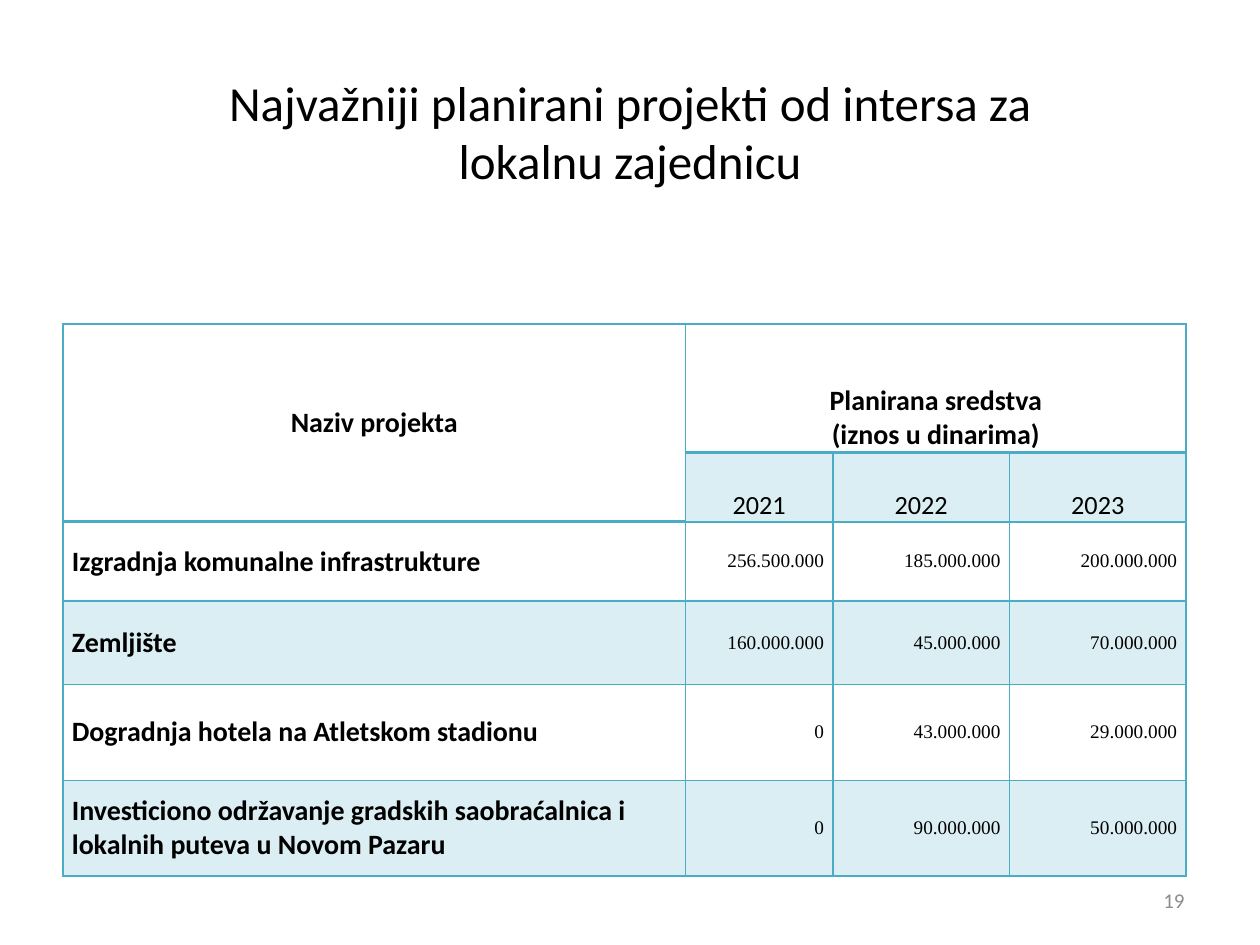
from dataclasses import dataclass

from lxml import etree
from pptx import Presentation
from pptx import util as u
from pptx.dml.color import RGBColor
from pptx.enum import text
from pptx.oxml import ns

BLACK = RGBColor(0x00, 0x00, 0x00)
GRAY = RGBColor(0x8C, 0x8C, 0x8C)
TEAL = RGBColor(0x4B, 0xAC, 0xC6)
TINT_ALPHA = 20000
LEFT, CENTER, RIGHT = text.PP_ALIGN.LEFT, text.PP_ALIGN.CENTER, text.PP_ALIGN.RIGHT
MIDDLE, BOTTOM = text.MSO_ANCHOR.MIDDLE, text.MSO_ANCHOR.BOTTOM


@dataclass(frozen=True)
class Style:
    size: float
    align: int
    bold: bool = False
    name: str = "Calibri"
    color: RGBColor = BLACK
    anchor: int = MIDDLE


@dataclass(frozen=True)
class Project:
    name: str
    amounts: tuple[str, str, str]


TITLE = Style(28, CENTER)
PAGE_NUMBER = Style(12, RIGHT, color=GRAY)
NAME_HEADING = Style(16, CENTER, bold=True)
FUNDS_HEADING = Style(16, CENTER, bold=True, anchor=BOTTOM)
YEAR = Style(15, CENTER, anchor=BOTTOM)
PROJECT_NAME = Style(16, LEFT, bold=True)
AMOUNT = Style(11, RIGHT, name="Times New Roman")

COLUMN_WIDTHS = (12.55, 2.97, 3.56, 3.56)
ROW_HEIGHTS = (2.59, 1.4, 1.6, 1.68, 1.93, 1.93)
YEARS = ("2021", "2022", "2023")
PROJECTS = (
    Project("Izgradnja komunalne infrastrukture",
            ("256.500.000", "185.000.000", "200.000.000")),
    Project("Zemljište", ("160.000.000", "45.000.000", "70.000.000")),
    Project("Dogradnja hotela na Atletskom stadionu",
            ("0", "43.000.000", "29.000.000")),
    Project("Investiciono održavanje gradskih saobraćalnica i\n"
            "lokalnih puteva u Novom Pazaru",
            ("0", "90.000.000", "50.000.000")),
)


def write(frame, wording: str, style: Style) -> None:
    frame.text = wording
    font_format = {"size": u.Pt(style.size), "bold": style.bold, "name": style.name}
    for paragraph in frame.paragraphs:
        paragraph.alignment = style.align
        for run in paragraph.runs:
            for attribute, value in font_format.items():
                setattr(run.font, attribute, value)
            run.font.color.rgb = style.color


def add_label(slide, wording: str, style: Style, left: float, top: float,
              width: float, height: float) -> None:
    label = slide.shapes.add_textbox(u.Cm(left), u.Cm(top), u.Cm(width), u.Cm(height))
    label.text_frame.word_wrap = True
    label.text_frame.vertical_anchor = style.anchor
    write(label.text_frame, wording, style)


def format_cell(cell, tinted: bool, bottom_width: float = 1) -> None:
    cell_format = {"margin_left": u.Cm(0.18), "margin_right": u.Cm(0.18),
                   "margin_top": 0, "margin_bottom": 0}
    for attribute, value in cell_format.items():
        setattr(cell, attribute, value)

    # Borders come before the fill in the cell properties
    properties = cell._tc.get_or_add_tcPr()
    for side, width in (("L", 1), ("R", 1), ("T", 1), ("B", bottom_width)):
        line = etree.SubElement(properties, ns.qn(f"a:ln{side}"), w=str(u.Pt(width)))
        paint = etree.SubElement(line, ns.qn("a:solidFill"))
        etree.SubElement(paint, ns.qn("a:srgbClr"), val=str(TEAL))

    if tinted:
        cell.fill.solid()
        cell.fill.fore_color.rgb = TEAL
        color = properties.find(".//" + ns.qn("a:solidFill") + "[last()]")
        color = properties.find(ns.qn("a:solidFill")).find(ns.qn("a:srgbClr"))
        etree.SubElement(color, ns.qn("a:alpha"), val=str(TINT_ALPHA))
    else:
        cell.fill.background()


def fill_cell(cell, wording: str, style: Style) -> None:
    write(cell.text_frame, wording, style)
    cell.vertical_anchor = style.anchor


def add_projects_table(slide) -> None:
    table = slide.shapes.add_table(
        len(ROW_HEIGHTS), len(COLUMN_WIDTHS), u.Cm(1.27), u.Cm(6.53),
        u.Cm(sum(COLUMN_WIDTHS)), u.Cm(sum(ROW_HEIGHTS))).table
    table.first_row = table.horz_banding = False
    for column, width in zip(table.columns, COLUMN_WIDTHS):
        column.width = u.Cm(width)
    for row, height in zip(table.rows, ROW_HEIGHTS):
        row.height = u.Cm(height)

    # Every second row is tinted, except under the merged name heading
    for r in range(len(ROW_HEIGHTS)):
        for c in range(len(COLUMN_WIDTHS)):
            under_heading = r == 1 and c == 0
            heading = r == 0 or under_heading
            format_cell(table.cell(r, c), r % 2 == 1 and not under_heading,
                        2 if heading else 1)

    # Headings
    table.cell(0, 0).merge(table.cell(1, 0))
    table.cell(0, 1).merge(table.cell(0, 3))
    fill_cell(table.cell(0, 0), "Naziv projekta", NAME_HEADING)
    fill_cell(table.cell(0, 1), "Planirana sredstva\n(iznos u dinarima)", FUNDS_HEADING)
    for c, year in enumerate(YEARS, start=1):
        fill_cell(table.cell(1, c), year, YEAR)

    # Projects
    for r, project in enumerate(PROJECTS, start=2):
        fill_cell(table.cell(r, 0), project.name, PROJECT_NAME)
        for c, amount in enumerate(project.amounts, start=1):
            fill_cell(table.cell(r, c), amount, AMOUNT)


def main() -> None:
    deck = Presentation()
    deck.slide_width, deck.slide_height = u.Cm(25.4), u.Cm(19.05)
    slide = deck.slides.add_slide(deck.slide_layouts[6])
    add_label(slide, "Najvažniji planirani projekti od intersa za\vlokalnu zajednicu",
              TITLE, 1.27, 0.76, 22.86, 3.76)
    add_projects_table(slide)
    add_label(slide, "19", PAGE_NUMBER, 18.2, 17.65, 5.93, 1.01)
    deck.save("out.pptx")


if __name__ == "__main__":
    main()
